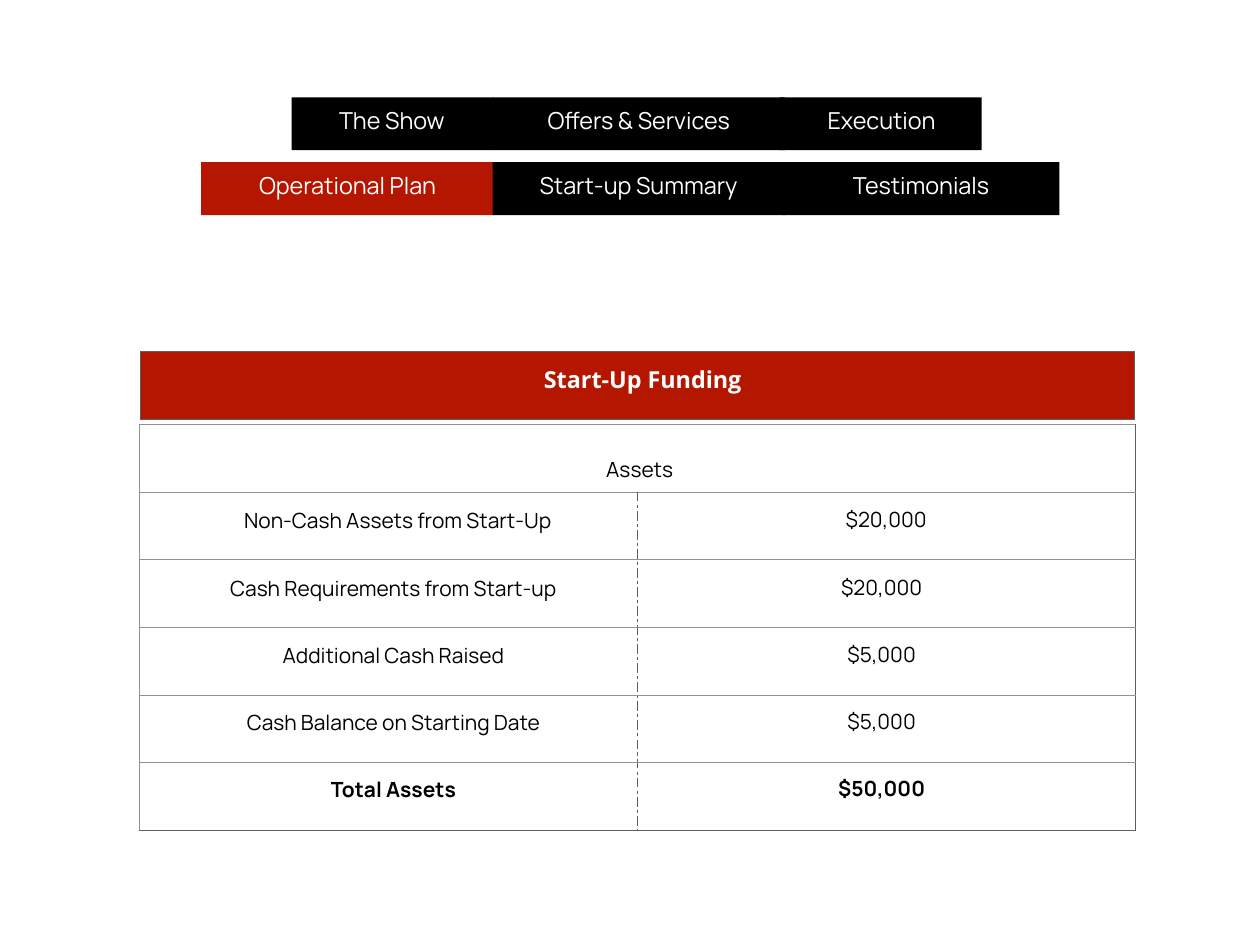
"""Build the start-up funding slide with its section navigation and asset table."""
from lxml.etree import SubElement
from pptx import Presentation
from pptx.dml.color import RGBColor
from pptx.enum.shapes import MSO_SHAPE as Shape
from pptx.enum.text import MSO_ANCHOR as Anchor, MSO_AUTO_SIZE as AutoSize, PP_ALIGN as Align
from pptx.oxml.ns import qn
from pptx.util import Cm, Pt

BLACK = RGBColor(0x00, 0x00, 0x00)
WHITE = RGBColor(0xFF, 0xFF, 0xFF)
RED = RGBColor(0xB4, 0x16, 0x00)
LIGHT_GRAY = RGBColor(0x92, 0x92, 0x92)
MID_GRAY = RGBColor(0x60, 0x60, 0x60)
DARK_GRAY = RGBColor(0x5D, 0x5D, 0x5D)
BODY_FONT = "Manrope"
INSET = Cm(0.08)


def write_label(label, text, size, color, font=BODY_FONT, bold=False):
    frame = label.text_frame
    frame.text = text
    frame.word_wrap = True
    frame.auto_size = AutoSize.NONE
    frame.vertical_anchor = Anchor.MIDDLE
    frame.margin_left = frame.margin_right = INSET
    frame.margin_top = frame.margin_bottom = INSET
    paragraph = frame.paragraphs[0]
    paragraph.alignment = Align.CENTER
    run_font = paragraph.runs[0].font
    run_font.name, run_font.size, run_font.bold = font, Pt(size), bold
    run_font.color.rgb = color
    return paragraph


def style_cell(cell, fill, left, right, top, bottom):
    properties = cell._tc.get_or_add_tcPr()
    for side, (color, dash) in zip("LRTB", (left, right, top, bottom)):
        border = SubElement(properties, qn(f"a:ln{side}"), w=str(Pt(0.75)))
        SubElement(SubElement(border, qn("a:solidFill")), qn("a:srgbClr"), val=str(color))
        SubElement(border, qn("a:prstDash"), val=dash)
    cell.fill.solid()
    cell.fill.fore_color.rgb = fill


deck = Presentation()
deck.slide_width, deck.slide_height = Cm(36.12), Cm(27.1)
slide = deck.slides.add_slide(deck.slide_layouts[5])
shapes = slide.shapes

light, mid, dark = (LIGHT_GRAY, "solid"), (MID_GRAY, "solid"), (DARK_GRAY, "solid")
divider = (DARK_GRAY, "dashDot")

assets = shapes.add_table(6, 2, Cm(3.99), Cm(12.17), Cm(28.56), Cm(11.64)).table
assets.first_row = assets.horz_banding = False
for row_index, row in enumerate(assets.rows):
    row.height = Cm(1.94)
    inner = light if row_index == 0 else divider
    bottom = mid if row_index == 5 else light
    style_cell(row.cells[0], WHITE, light, dark if row_index == 0 else inner, light, bottom)
    style_cell(row.cells[1], WHITE, inner, dark, light, bottom)
assets.cell(0, 0).merge(assets.cell(0, 1))

banner = shapes.add_table(1, 1, Cm(4.03), Cm(10.07), Cm(28.48), Cm(1.95)).table
banner.first_row = banner.horz_banding = False
style_cell(banner.cell(0, 0), RED, dark, dark, mid, mid)

title = shapes.title
title.left, title.top, title.width, title.height = Cm(14.83), Cm(10.29), Cm(7.19), Cm(1.19)
write_label(title, "Start-Up Funding", 19, WHITE, "Open Sans", True)
shapes.element.append(title.element)

heading = shapes.add_textbox(Cm(14.15), Cm(12.32), Cm(8.38), Cm(1.19))
write_label(heading, "Assets", 17, BLACK).line_spacing = 2.47

funding = [
    ("Non-Cash Assets from Start-Up", 5.92, 10.97, "$20,000", 22.28),
    ("Cash Requirements from Start-up", 5.66, 11.23, "$20,000", 22.15),
    ("Additional Cash Raised", 7.09, 8.38, "$5,000", 22.15),
    ("Cash Balance on Starting Date", 5.92, 10.72, "$5,000", 22.15),
    ("Total Assets", 7.09, 8.38, "$50,000", 22.15),
]
for index, (item, item_left, item_width, amount, amount_left) in enumerate(funding):
    top = 14.33 + 1.93 * index
    bold = item == "Total Assets"
    item_label = shapes.add_textbox(Cm(item_left), Cm(top), Cm(item_width), Cm(1.19))
    write_label(item_label, item, 17, BLACK, bold=bold)
    amount_label = shapes.add_textbox(Cm(amount_left), Cm(top - 0.03), Cm(6.25), Cm(1.19))
    write_label(amount_label, amount, 17, BLACK, bold=bold)

sections = [
    ("Operational Plan", 4.65, 5.77, 8.38, 6.6, 6.73, RED),
    ("Testimonials", 4.65, 22.45, 7.92, 23.04, 6.73, BLACK),
    ("Start-up Summary", 4.65, 14.12, 8.38, 14.94, 6.73, BLACK),
    ("The Show", 2.79, 8.36, 5.79, 9.19, 4.09, BLACK),
    ("Execution", 2.79, 22.35, 5.79, 23.09, 4.37, BLACK),
    ("Offers & Services", 2.79, 14.12, 8.38, 14.71, 7.21, BLACK),
]
for section, top, tab_left, tab_width, *_, fill in sections:
    tab = shapes.add_shape(Shape.RECTANGLE, Cm(tab_left), Cm(top), Cm(tab_width), Cm(1.52))
    tab.shadow.inherit = False
    tab.fill.solid()
    tab.fill.fore_color.rgb = fill
    tab.line.fill.background()
for section, top, *_, label_left, label_width, fill in sections:
    tab_label = shapes.add_textbox(Cm(label_left), Cm(top - 0.1), Cm(label_width), Cm(1.5))
    write_label(tab_label, section, 19, WHITE)

deck.save("out.pptx")
